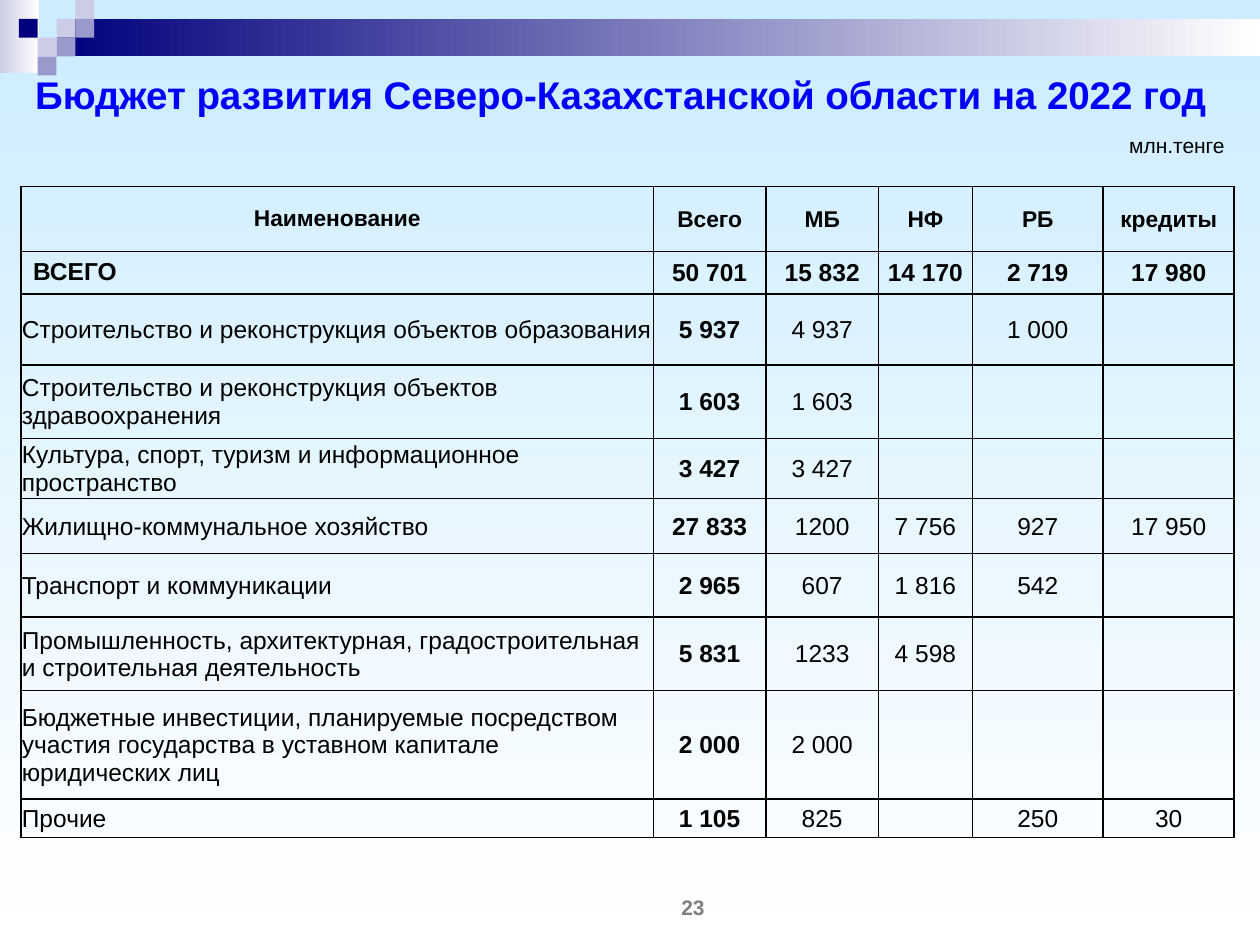
from dataclasses import dataclass

from lxml.etree import SubElement
from pptx import Presentation
from pptx.dml.color import RGBColor as RGB
from pptx.enum.shapes import MSO_SHAPE as Shape
from pptx.enum.text import MSO_ANCHOR as Anchor, PP_ALIGN as Align
from pptx.oxml import parse_xml
from pptx.oxml.ns import nsdecls, qn
from pptx.util import Cm, Pt


@dataclass(frozen=True)
class Theme:
    font: str = "Arial"
    sky: str = "CCECFF"
    white: str = "FFFFFF"
    navy: str = "00007D"
    lilac: str = "CCCCE6"
    violet: str = "9999CC"
    title: str = "0000FF"
    text: str = "000000"
    muted: str = "7F7F7F"
    title_size: int = 22
    body_size: int = 14
    header_size: int = 13
    small_size: int = 12


THEME = Theme()
COLUMN_WIDTHS = [12.75, 2.27, 2.27, 1.89, 2.64, 2.64]
ROW_HEIGHTS = [1.31, 0.84, 1.43, 1.49, 1.13, 1.11, 1.28, 1.48, 2.19, 0.77]
BUDGET = [
    ("Наименование", "Всего", "МБ", "НФ", "РБ", "кредиты"),
    ("ВСЕГО", "50 701", "15 832", "14 170", "2 719", "17 980"),
    ("Строительство и реконструкция объектов образования",
     "5 937", "4 937", "", "1 000", ""),
    ("Строительство и реконструкция объектов здравоохранения",
     "1 603", "1 603", "", "", ""),
    ("Культура, спорт, туризм и информационное пространство",
     "3 427", "3 427", "", "", ""),
    ("Жилищно-коммунальное хозяйство",
     "27 833", "1200", "7 756", "927", "17 950"),
    ("Транспорт и коммуникации", "2 965", "607", "1 816", "542", ""),
    ("Промышленность, архитектурная, градостроительная и строительная "
     "деятельность", "5 831", "1233", "4 598", "", ""),
    ("Бюджетные инвестиции, планируемые посредством участия государства "
     "в уставном капитале юридических лиц", "2 000", "2 000", "", "", ""),
    ("Прочие", "1 105", "825", "", "250", "30"),
]


def style(paragraph, size, color, bold=False, align=Align.LEFT):
    paragraph.alignment = align
    font = paragraph.font
    font.name, font.size, font.bold = THEME.font, Pt(size), bold
    font.color.rgb = RGB.from_string(color)


def fade(fill, start, end, angle=0):
    fill.gradient()
    fill.gradient_angle = angle
    for stop, color in zip(fill.gradient_stops, (start, end)):
        stop.color.rgb = RGB.from_string(color)


def add_block(slide, left, top, width, height, color, fade_to=None):
    block = slide.shapes.add_shape(
        Shape.RECTANGLE, Cm(left), Cm(top), Cm(width), Cm(height))
    block.shadow.inherit = False
    block.line.fill.background()
    if fade_to:
        fade(block.fill, color, fade_to)
    else:
        block.fill.solid()
        block.fill.fore_color.rgb = RGB.from_string(color)


def add_banner(slide, left, top, width, step):
    """Fading bars with a mosaic of squares laid on a grid of the given step."""
    add_block(slide, left, top, 0.79, 1.47, THEME.lilac, THEME.white)
    bar_left = 3 * step
    add_block(slide, left + bar_left, top + step, width - bar_left, 2 * step,
              THEME.navy, THEME.white)
    mosaic = {
        THEME.lilac: [(3, 1), (4, 0), (2, 2)],
        THEME.violet: [(4, 1), (3, 2), (2, 3)],
        THEME.navy: [(1, 1)],
    }
    for color, places in mosaic.items():
        for column, row in places:
            add_block(slide, left + column * step, top + row * step,
                      step, step, color)


def add_label(slide, left, top, width, height, text, **look):
    frame = slide.shapes.add_textbox(
        Cm(left), Cm(top), Cm(width), Cm(height)).text_frame
    frame.word_wrap = True
    frame.vertical_anchor = Anchor.MIDDLE
    frame.margin_top = frame.margin_bottom = 0
    frame.text = text
    style(frame.paragraphs[0], **look)


def set_borders(cell):
    properties = cell._tc.get_or_add_tcPr()
    for index, side in enumerate(("lnL", "lnR", "lnT", "lnB")):
        border = parse_xml(f'<a:{side} {nsdecls("a")} w="{Pt(1)}"/>')
        fill = SubElement(border, qn("a:solidFill"))
        SubElement(fill, qn("a:srgbClr"), val=THEME.text)
        properties.insert(index, border)


def fill_cell(cell, text, row, column):
    cell.text = text
    cell.fill.background()
    set_borders(cell)
    is_heading = column == 0 and row < 2
    side, edge = (0.25, 0.13) if is_heading else (0.02, 0.02)
    cell.margin_left = cell.margin_right = Cm(side)
    cell.margin_top = Cm(edge)
    cell.margin_bottom = Cm(edge if is_heading else 0)
    is_total_name = (row, column) == (1, 0)
    cell.vertical_anchor = Anchor.TOP if is_total_name else Anchor.MIDDLE
    style(cell.text_frame.paragraphs[0],
          size=THEME.header_size if row == 0 else THEME.body_size,
          color=THEME.text,
          bold=row < 2 or column == 1,
          align=Align.CENTER if row == 0 or column else Align.LEFT)


def add_budget_table(slide, left, top):
    table = slide.shapes.add_table(
        len(BUDGET), len(COLUMN_WIDTHS), Cm(left), Cm(top),
        Cm(sum(COLUMN_WIDTHS)), Cm(sum(ROW_HEIGHTS))).table
    table.first_row = table.horz_banding = False
    for column, width in zip(table.columns, COLUMN_WIDTHS):
        column.width = Cm(width)
    for row, height in zip(table.rows, ROW_HEIGHTS):
        row.height = Cm(height)
    for row, values in enumerate(BUDGET):
        for column, text in enumerate(values):
            fill_cell(table.cell(row, column), text, row, column)


def build_budget_slide(deck):
    slide = deck.slides.add_slide(deck.slide_layouts[6])
    fade(slide.background.fill, THEME.sky, THEME.white, angle=270)
    add_banner(slide, 0, 0, 25.4, step=0.38)
    add_label(slide, 0.1, 1.15, 24.84, 1.5,
              "Бюджет развития Северо-Казахстанской области на 2022 год",
              size=THEME.title_size, color=THEME.title, bold=True,
              align=Align.CENTER)
    add_budget_table(slide, 0.42, 3.76)
    add_label(slide, 11.43, 17.99, 5.08, 0.61, "23", size=THEME.small_size,
              color=THEME.muted, bold=True, align=Align.CENTER)
    add_label(slide, 21.43, 2.62, 3.51, 0.61, "млн.тенге",
              size=THEME.small_size, color=THEME.text, align=Align.RIGHT)


def main():
    deck = Presentation()
    deck.slide_width, deck.slide_height = Cm(25.4), Cm(19.05)
    build_budget_slide(deck)
    deck.save("out.pptx")


if __name__ == "__main__":
    main()
